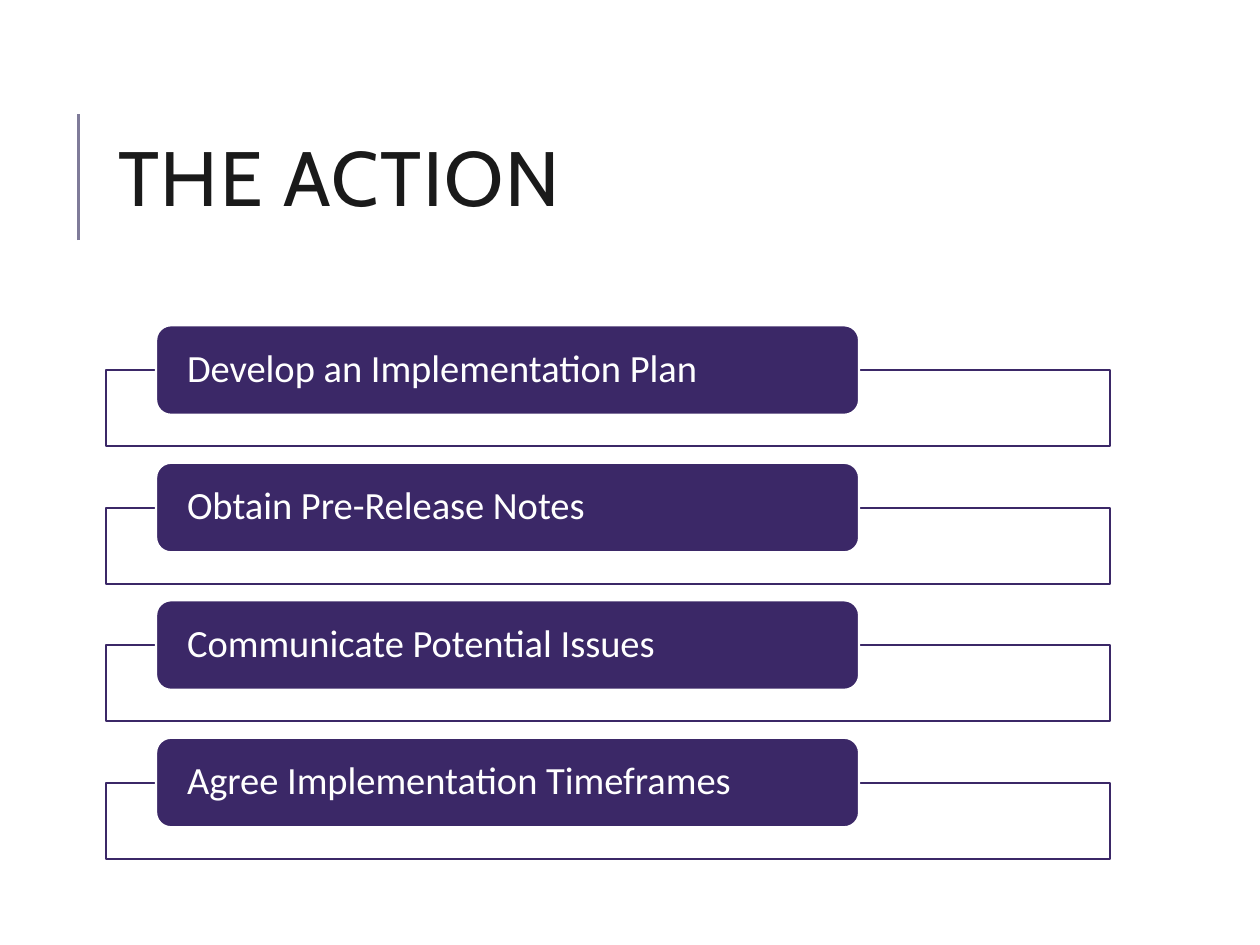
from pptx import Presentation
from pptx.dml.color import RGBColor
from pptx.enum.shapes import MSO_CONNECTOR, MSO_SHAPE
from pptx.enum.text import MSO_ANCHOR, PP_ALIGN
from pptx.oxml.ns import qn
from pptx.util import Pt
from lxml.etree import SubElement

HEADING = "THE ACTION"
ACTIONS = [
    "Develop an Implementation Plan",
    "Obtain Pre-Release Notes",
    "Communicate Potential Issues",
    "Agree Implementation Timeframes",
]
COLORS = {"purple": "3B2867", "accent": "7F7B99", "ink": "1A1A1A", "white": "FFFFFF"}

LEFT, WIDTH = 60.5, 573.8
FIRST_FRAME_TOP, FRAME_HEIGHT, PITCH = 211.5, 43.5, 78.57
LABEL_INDENT, LABEL_RISE = 28.7, 25.6
LABEL_WIDTH, LABEL_HEIGHT = 401.7, 51.1


def color(name):
    return RGBColor.from_string(COLORS[name])


def add_box(slide, kind, left, top, width, height, fill, line):
    box = slide.shapes.add_shape(kind, Pt(left), Pt(top), Pt(width), Pt(height))
    box.shadow.inherit = False
    box.fill.solid()
    box.fill.fore_color.rgb = color(fill)
    box.line.color.rgb = color(line)
    box.line.width = Pt(1.25)
    return box


def write(shape, text, font, size, ink, spacing, inset):
    frame = shape.text_frame
    frame.word_wrap = True
    frame.vertical_anchor = MSO_ANCHOR.MIDDLE
    frame.margin_left = frame.margin_right = Pt(inset)
    frame.margin_top = frame.margin_bottom = Pt(0)
    paragraph = frame.paragraphs[0]
    paragraph.alignment = PP_ALIGN.LEFT
    paragraph.line_spacing = spacing
    run = paragraph.add_run()
    run.text = text
    run.font.name = font
    run.font.size = Pt(size)
    run.font.color.rgb = color(ink)
    return run


def add_heading(slide):
    rule = slide.shapes.add_connector(
        MSO_CONNECTOR.STRAIGHT, Pt(44.8), Pt(137.2), Pt(44.8), Pt(65.2))
    rule.line.color.rgb = color("accent")
    rule.line.width = Pt(1.5)
    SubElement(rule._element.spPr, qn("a:effectLst"))
    heading = slide.shapes.add_textbox(Pt(LEFT), Pt(46.5), Pt(WIDTH), Pt(118))
    run = write(heading, HEADING, "Cabin", 44, "ink", 0.8, 7.2)
    run.font._element.set("spc", "100")


def add_action(slide, index, action):
    top = FIRST_FRAME_TOP + index * PITCH
    add_box(slide, MSO_SHAPE.RECTANGLE, LEFT, top, WIDTH, FRAME_HEIGHT,
            "white", "purple")
    label = add_box(slide, MSO_SHAPE.ROUNDED_RECTANGLE, LEFT + LABEL_INDENT,
                    top - LABEL_RISE, LABEL_WIDTH, LABEL_HEIGHT, "purple", "white")
    write(label, action, "Calibri", 22, "white", 0.9, 15.2)


def main():
    deck = Presentation()
    deck.slide_width, deck.slide_height = Pt(720), Pt(540)
    slide = deck.slides.add_slide(deck.slide_layouts[6])
    add_heading(slide)
    for index, action in enumerate(ACTIONS):
        add_action(slide, index, action)
    deck.save("out.pptx")


if __name__ == "__main__":
    main()
